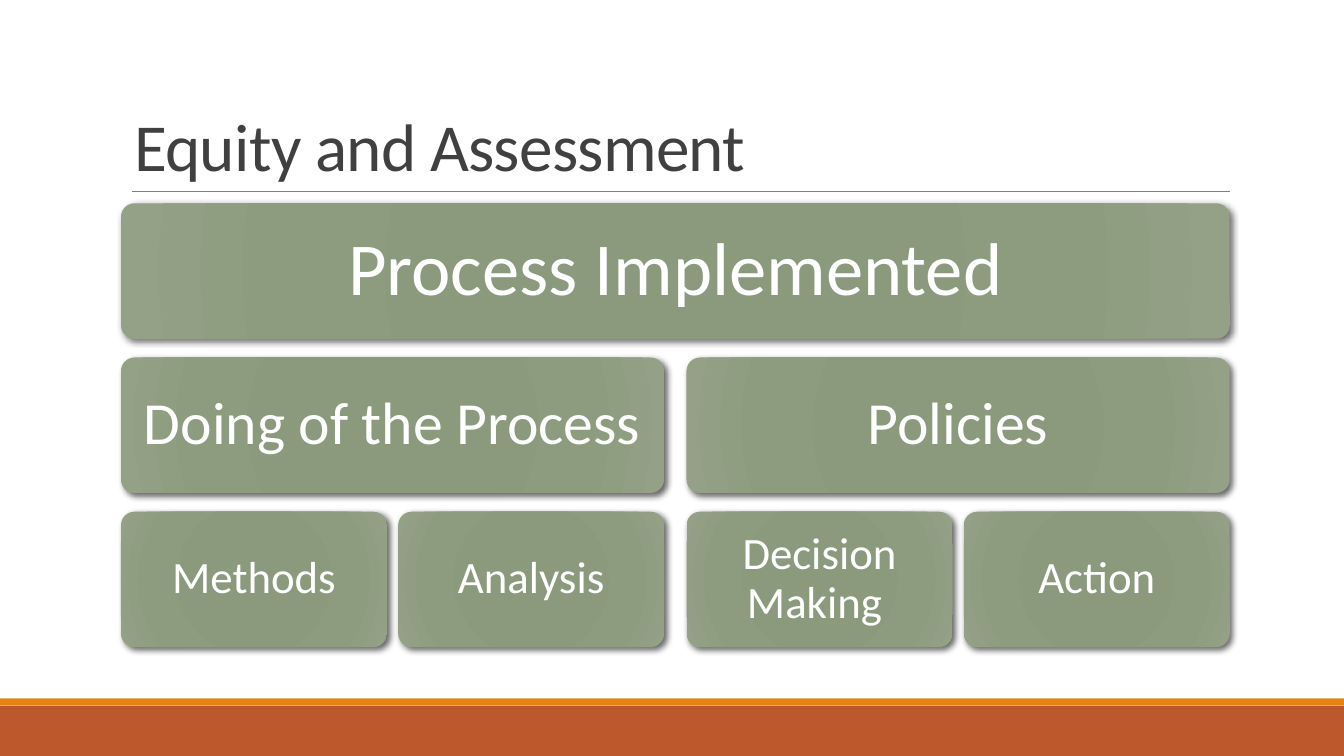
import pptx
import pptx.dml.color
import pptx.enum.shapes
import pptx.enum.text
import pptx.oxml
import pptx.oxml.ns
import pptx.util

Pt = pptx.util.Pt
SHAPES = pptx.enum.shapes.MSO_SHAPE
ANCHOR = pptx.enum.text.MSO_ANCHOR
ALIGN = pptx.enum.text.PP_ALIGN

COLOURS = {
    "title": "404040",
    "rule": "808080",
    "band": "BD582C",
    "stripe": "E48312",
    "label": "FFFFFF",
    "shadow": "000000",
}
BOX_GRADIENT = {0: "8A987B", 34: "8B997D", 70: "8D9C7E", 100: "94A187"}

SLIDE_WIDTH, SLIDE_HEIGHT = 720, 405
TREE_LEFT, TREE_TOP = 64.8, 108.9
LEAF_WIDTH, BOX_HEIGHT, ROW_STEP = 142.5, 72.6, 82.6
LEVELS = [
    {"size": 40, "inset": 12, "child_gap": 12},
    {"size": 32, "inset": 9.6, "child_gap": 6},
    {"size": 24, "inset": 7.2, "child_gap": 0},
]
PROCESS_TREE = ("Process Implemented", [
    ("Doing of the Process", [("Methods", []), ("Analysis", [])]),
    ("Policies", [("Decision Making ", []), ("Action", [])]),
])


def rgb(name):
    return pptx.dml.color.RGBColor.from_string(COLOURS[name])


def apply(target, values):
    for attribute, value in values.items():
        setattr(target, attribute, value)


def write_text(shape, text, size, colour, frame_format, paragraph_format):
    frame = shape.text_frame
    frame.text = text
    apply(frame, {"word_wrap": True, **frame_format})
    paragraph = frame.paragraphs[0]
    apply(paragraph, paragraph_format)
    font = paragraph.runs[0].font
    apply(font, {"name": "Calibri", "size": Pt(size)})
    font.color.rgb = rgb(colour)
    return paragraph.runs[0]


def add_bar(slide, top, height, colour):
    bar = slide.shapes.add_shape(
        SHAPES.RECTANGLE, Pt(0), Pt(top), Pt(SLIDE_WIDTH), Pt(height))
    bar.shadow.inherit = False
    bar.fill.solid()
    bar.fill.fore_color.rgb = rgb(colour)
    bar.line.fill.background()


def add_title_rule(slide):
    rule = slide.shapes.add_connector(
        pptx.enum.shapes.MSO_CONNECTOR.STRAIGHT,
        Pt(70.6), Pt(102.6), Pt(658.8), Pt(102.6))
    rule.line.width = Pt(0.5)
    rule.line.color.rgb = rgb("rule")
    pptx.oxml.ns.qn("a:effectLst")
    rule._element.spPr.append(
        rule._element.makeelement(pptx.oxml.ns.qn("a:effectLst"), {}))


def format_title(slide):
    title = slide.shapes.title
    apply(title, {"left": Pt(64.8), "top": Pt(17.3),
                  "width": Pt(594), "height": Pt(85.5)})
    run = write_text(
        title, "Equity and Assessment", 36, "title",
        {"vertical_anchor": ANCHOR.BOTTOM,
         "auto_size": pptx.enum.text.MSO_AUTO_SIZE.NONE},
        {"alignment": ALIGN.LEFT, "line_spacing": 0.85})
    run.font._element.set("spc", "-40")


def add_gradient_and_shadow(box):
    """Give the box a radial fill and a soft shadow to the lower right."""
    namespace = pptx.oxml.ns.nsdecls("a")
    stops = "".join(
        f'<a:gs pos="{place * 1000}"><a:srgbClr val="{colour}"/></a:gs>'
        for place, colour in BOX_GRADIENT.items())
    gradient = pptx.oxml.parse_xml(
        f'<a:gradFill {namespace} rotWithShape="1"><a:gsLst>{stops}</a:gsLst>'
        '<a:path path="circle"><a:fillToRect l="100000" t="100000" '
        'r="100000" b="100000"/></a:path></a:gradFill>')
    shadow = pptx.oxml.parse_xml(
        f'<a:outerShdw {namespace} blurRad="{Pt(3.5)}" dist="{Pt(2)}" '
        f'dir="2700000" rotWithShape="0"><a:srgbClr val="{COLOURS["shadow"]}">'
        '<a:alpha val="60000"/></a:srgbClr></a:outerShdw>')
    box.line.fill.background()
    box.shadow.inherit = False
    properties = box._element.spPr
    properties.find(pptx.oxml.ns.qn("a:ln")).addprevious(gradient)
    properties.find(pptx.oxml.ns.qn("a:effectLst")).append(shadow)


def add_box(slide, text, left, width, depth):
    box = slide.shapes.add_shape(
        SHAPES.ROUNDED_RECTANGLE, Pt(left), Pt(TREE_TOP + depth * ROW_STEP),
        Pt(width), Pt(BOX_HEIGHT))
    box.adjustments[0] = 0.1
    add_gradient_and_shadow(box)
    level = LEVELS[depth]
    insets = {f"margin_{side}": Pt(level["inset"])
              for side in ("left", "top", "right", "bottom")}
    write_text(box, text, level["size"], "label",
               {"vertical_anchor": ANCHOR.MIDDLE, **insets},
               {"alignment": ALIGN.CENTER, "line_spacing": 0.9})


def branch_width(children, depth):
    if not children:
        return LEAF_WIDTH
    widths = [branch_width(below, depth + 1) for _, below in children]
    return sum(widths) + LEVELS[depth]["child_gap"] * (len(children) - 1)


def add_branch(slide, branch, left, depth=0):
    """Draw a box as wide as its children, then the children below it."""
    text, children = branch
    add_box(slide, text, left, branch_width(children, depth), depth)
    for child in children:
        add_branch(slide, child, left, depth + 1)
        left += branch_width(child[1], depth + 1) + LEVELS[depth]["child_gap"]


def main():
    deck = pptx.Presentation()
    apply(deck, {"slide_width": Pt(SLIDE_WIDTH),
                 "slide_height": Pt(SLIDE_HEIGHT)})
    slide = deck.slides.add_slide(deck.slide_layouts[5])
    add_bar(slide, 378, 27, "band")
    add_bar(slide, 374.2, 3.8, "stripe")
    add_title_rule(slide)
    format_title(slide)
    add_branch(slide, PROCESS_TREE, TREE_LEFT)
    deck.save("out.pptx")


if __name__ == "__main__":
    main()
